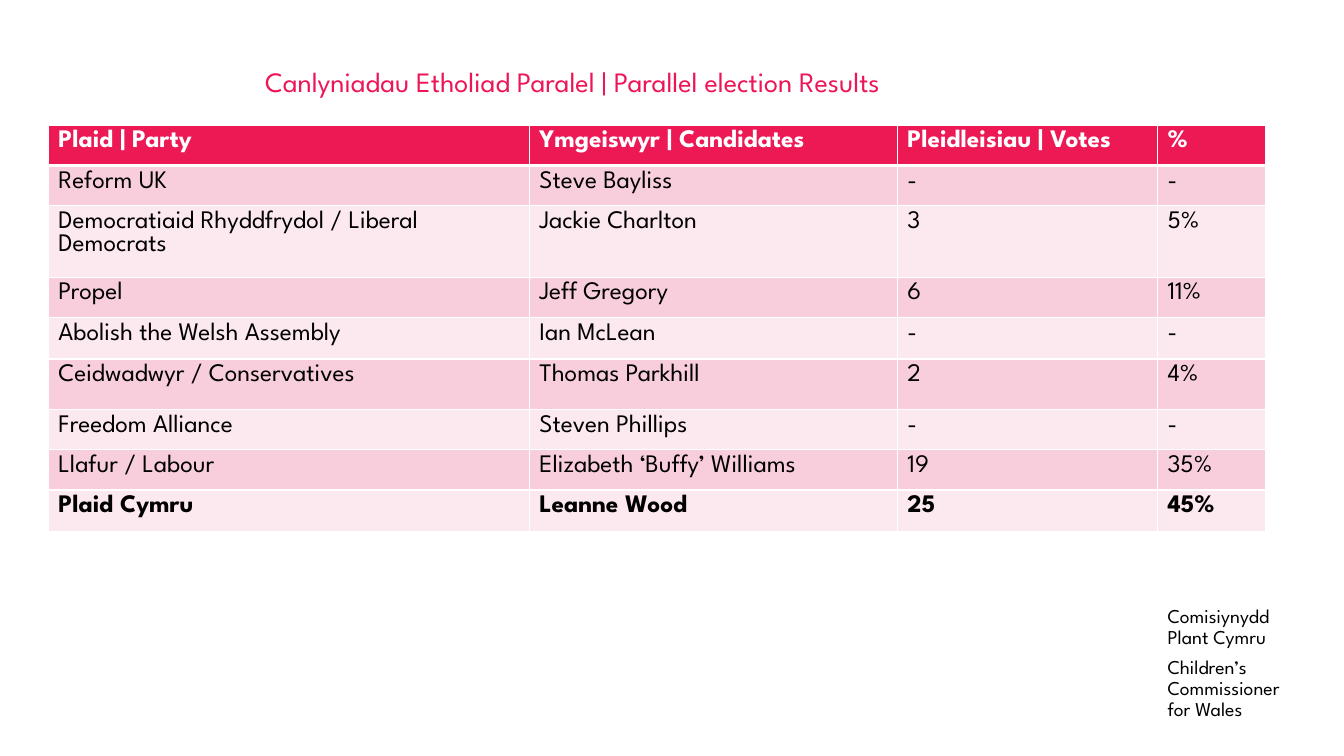
from copy import deepcopy

from pptx import Presentation
from pptx.dml.color import RGBColor
from pptx.enum.text import MSO_ANCHOR as Anchor
from pptx.oxml.xmlchemy import OxmlElement as Element
from pptx.util import Inches, Pt

HEADER, BAND_DARK, BAND_LIGHT = "EC1955", "F8CEDD", "FCE8EF"
TITLE, WHITE, BLACK = "ED1556", "FFFFFF", "000000"


def rgb(value):
    return RGBColor.from_string(value)


class Deck:
    def __init__(self, font):
        self.font = font
        self.prs = Presentation()
        self.prs.slide_width, self.prs.slide_height = Inches(13.33), Inches(7.5)
        self.s = self.prs.slides.add_slide(self.prs.slide_layouts[6])

    def style(self, p, size, color, bold=False):
        for r in p.runs:
            for key, value in {"name": self.font, "size": Pt(size), "bold": bold}.items():
                setattr(r.font, key, value)
            r.font.color.rgb = rgb(color)
        # Line breaks take the size of the text around them
        for br in p._p.br_lst if hasattr(p._p, "br_lst") else p._p.findall(p.runs[0]._r.tag[:-1] + "br"):
            br.insert(0, deepcopy(p.runs[0]._r.rPr))

    def text(self, box, paragraphs, size, color, anchor=Anchor.TOP, space_after=0):
        tf = self.s.shapes.add_textbox(*map(Inches, box)).text_frame
        frame = {"word_wrap": True, "vertical_anchor": anchor, "margin_left": 0,
                 "margin_top": 0, "margin_right": 0, "margin_bottom": 0}
        for key, value in frame.items():
            setattr(tf, key, value)
        for i, content in enumerate(paragraphs):
            p = tf.add_paragraph() if i else tf.paragraphs[0]
            p.text = content
            p.line_spacing = 0.9
            if i < len(paragraphs) - 1:
                p.space_after = Pt(space_after)
            self.style(p, size, color)

    def border(self, cell, widths):
        tcPr = cell._tc.get_or_add_tcPr()
        for i, (side, width) in enumerate(widths.items()):
            ln = Element(f"a:ln{side}")
            ln.set("w", str(Pt(width)))
            fill, color = Element("a:solidFill"), Element("a:srgbClr")
            color.set("val", WHITE)
            fill.append(color)
            ln.append(fill)
            tcPr.insert(i, ln)

    def table(self, left, top, widths, heights, rows):
        table = self.s.shapes.add_table(
            len(rows), len(widths), Inches(left), Inches(top),
            Inches(sum(widths)), Inches(sum(heights))).table
        for column, width in zip(table.columns, widths):
            column.width = Inches(width)
        last = len(rows) - 1
        for i, (row, height) in enumerate(zip(rows, heights)):
            table.rows[i].height = Inches(height)
            fill = HEADER if i == 0 else BAND_DARK if i % 2 else BAND_LIGHT
            for j, content in enumerate(row):
                cell = table.cell(i, j)
                cell.text = content
                cell.fill.solid()
                cell.fill.fore_color.rgb = rgb(fill)
                self.style(cell.text_frame.paragraphs[0], 18,
                           BLACK if i else WHITE, i in (0, last))
                # A heavier rule separates the header from the results
                self.border(cell, {"L": 1, "R": 1, "T": 3 if i == 1 else 1,
                                   "B": 1 if i else 3})


def main():
    deck = Deck("League Spartan")

    # Commissioner's name
    deck.text((11.58, 6.01, 1.38, 1.15),
              ["Comisiynydd\nPlant Cymru", "Children’s\nCommissioner\nfor Wales"],
              14, BLACK, Anchor.MIDDLE, 6)

    # Title
    deck.text((2.63, 0.68, 9.41, 0.76),
              ["Canlyniadau Etholiad Paralel | Parallel election Results"], 20, TITLE)

    # Election results
    results = [
        ("Plaid | Party", "Ymgeiswyr | Candidates", "Pleidleisiau | Votes", "%"),
        ("Reform UK", "Steve Bayliss", "-", "-"),
        ("Democratiaid Rhyddfrydol / Liberal Democrats", "Jackie Charlton", "3", "5%"),
        ("Propel", "Jeff Gregory", "6", "11%"),
        ("Abolish the Welsh Assembly", "Ian McLean", "-", "-"),
        ("Ceidwadwyr / Conservatives", "Thomas Parkhill", "2", "4%"),
        ("Freedom Alliance", "Steven Phillips", "-", "-"),
        ("Llafur / Labour", "Elizabeth ‘Buffy’ Williams", "19", "35%"),
        ("Plaid Cymru", "Leanne Wood", "25", "45%"),
    ]
    deck.table(0.48, 1.24, [4.77, 3.65, 2.58, 1.07],
               [0.4, 0.4, 0.71, 0.4, 0.41, 0.5, 0.4, 0.4, 0.41], results)

    deck.prs.save("out.pptx")


if __name__ == "__main__":
    main()
